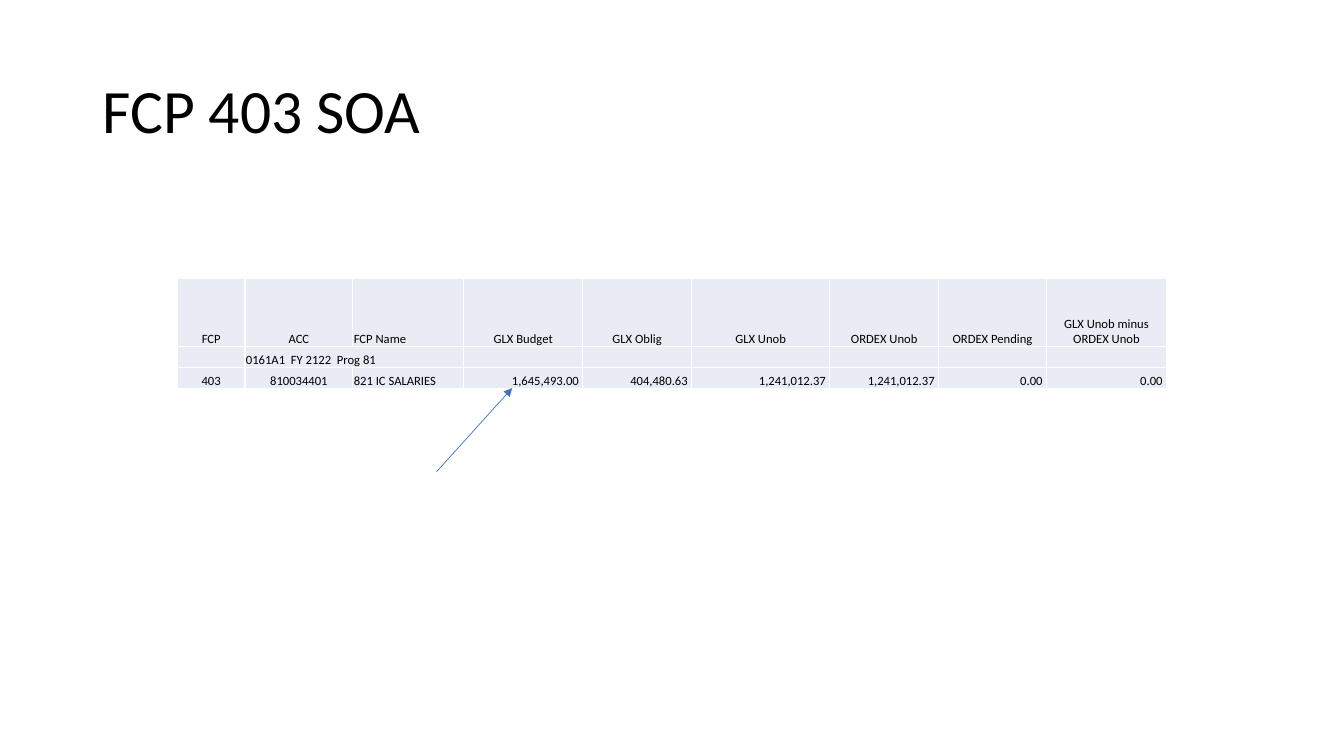
import pptx
import pptx.dml.color
import pptx.enum.shapes
import pptx.enum.text
import pptx.oxml
import pptx.oxml.ns
import pptx.util
from lxml import etree
from pptx.util import Inches

COLORS = {"text": "000000", "cell": "E9EBF5", "border": "FFFFFF", "arrow": "4472C4"}
FONT = "Calibri"
ALIGN = pptx.enum.text.PP_ALIGN
ANCHOR = pptx.enum.text.MSO_ANCHOR

COLUMN_WIDTHS = [0.67, 1.07, 1.1, 1.18, 1.08, 1.37, 1.08, 1.07, 1.19]
ROW_HEIGHTS = [0.68, 0.21, 0.21]
HEADER = ["FCP", "ACC", "FCP Name", "GLX Budget", "GLX Oblig", "GLX Unob",
          "ORDEX Unob", "ORDEX Pending", "GLX Unob minus\nORDEX Unob"]
FUND = ["", "0161A1  FY 2122  Prog 81"] + [""] * 7
BALANCES = ["403", "810034401", "821 IC SALARIES", "1,645,493.00 ", "404,480.63 ",
            "1,241,012.37 ", "1,241,012.37 ", "0.00 ", "0.00 "]
HEADER_ALIGN = [ALIGN.CENTER] * 2 + [ALIGN.LEFT] + [ALIGN.CENTER] * 6
FUND_ALIGN = [ALIGN.LEFT] * 9
BALANCES_ALIGN = [ALIGN.CENTER] * 2 + [ALIGN.LEFT] + [ALIGN.RIGHT] * 6


def rgb(name):
    return pptx.dml.color.RGBColor.from_string(COLORS[name])


def sub_element(parent, tag, **attributes):
    return etree.SubElement(parent, pptx.oxml.ns.qn(tag), **attributes)


def add_text(paragraph, text, size):
    for index, line in enumerate(text.split("\n")):
        if index:
            paragraph.add_line_break()
        run = paragraph.add_run()
        run.text = line
        run.font.name = FONT
        run.font.size = pptx.util.Pt(size)
        run.font.color.rgb = rgb("text")


def add_title(slide, text):
    box = slide.shapes.add_textbox(Inches(0.92), Inches(0.4), Inches(11.5), Inches(1.45))
    frame = box.text_frame
    frame.word_wrap = True
    frame.vertical_anchor = ANCHOR.MIDDLE
    paragraph = frame.paragraphs[0]
    paragraph.line_spacing = 0.9
    add_text(paragraph, text, 44)


def set_borders(cell):
    properties = cell._tc.get_or_add_tcPr()
    for position, side in enumerate(("a:lnL", "a:lnR", "a:lnT", "a:lnB")):
        line = pptx.oxml.parse_xml(
            f'<{side} {pptx.oxml.ns.nsdecls("a")} w="12700"><a:solidFill>'
            f'<a:srgbClr val="{COLORS["border"]}"/></a:solidFill></{side}>')
        properties.insert(position, line)


def format_cell(cell, text, alignment):
    cell.fill.solid()
    cell.fill.fore_color.rgb = rgb("cell")
    set_borders(cell)
    cell.vertical_anchor = ANCHOR.BOTTOM
    cell.margin_left = cell.margin_right = cell.margin_top = Inches(0.01)
    cell.margin_bottom = 0
    paragraph = cell.text_frame.paragraphs[0]
    paragraph.alignment = alignment
    if text:
        add_text(paragraph, text, 9)
    else:
        # Empty cells need a small size to keep the row low
        sub_element(paragraph._p, "a:endParaRPr", sz="900")


def add_status_table(slide):
    rows = [(HEADER, HEADER_ALIGN), (FUND, FUND_ALIGN), (BALANCES, BALANCES_ALIGN)]
    table = slide.shapes.add_table(
        len(rows), len(COLUMN_WIDTHS), Inches(1.76), Inches(2.76),
        Inches(sum(COLUMN_WIDTHS)), Inches(sum(ROW_HEIGHTS))).table
    table.first_row = False
    table.horz_banding = False
    for column, width in zip(table.columns, COLUMN_WIDTHS):
        column.width = Inches(width)
    for row, height, (texts, alignments) in zip(table.rows, ROW_HEIGHTS, rows):
        row.height = Inches(height)
        for cell, text, alignment in zip(row.cells, texts, alignments):
            format_cell(cell, text, alignment)
    table.cell(1, 1).merge(table.cell(1, 2))


def add_arrow(slide, start, end):
    arrow = slide.shapes.add_connector(
        pptx.enum.shapes.MSO_CONNECTOR.STRAIGHT,
        *[Inches(value) for value in start + end])
    arrow.line.color.rgb = rgb("arrow")
    arrow.line.width = pptx.util.Pt(0.5)
    sub_element(arrow.line._get_or_add_ln(), "a:tailEnd", type="triangle")
    sub_element(arrow._element.spPr, "a:effectLst")


def main():
    presentation = pptx.Presentation()
    presentation.slide_width = Inches(13.33)
    presentation.slide_height = Inches(7.5)
    slide = presentation.slides.add_slide(presentation.slide_layouts[6])

    # Title
    add_title(slide, "FCP 403 SOA")
    # Status of allowance
    add_status_table(slide)
    # Pointer to the budget figure
    add_arrow(slide, (4.33, 4.68), (5.08, 3.85))

    presentation.save("out.pptx")


if __name__ == "__main__":
    main()
